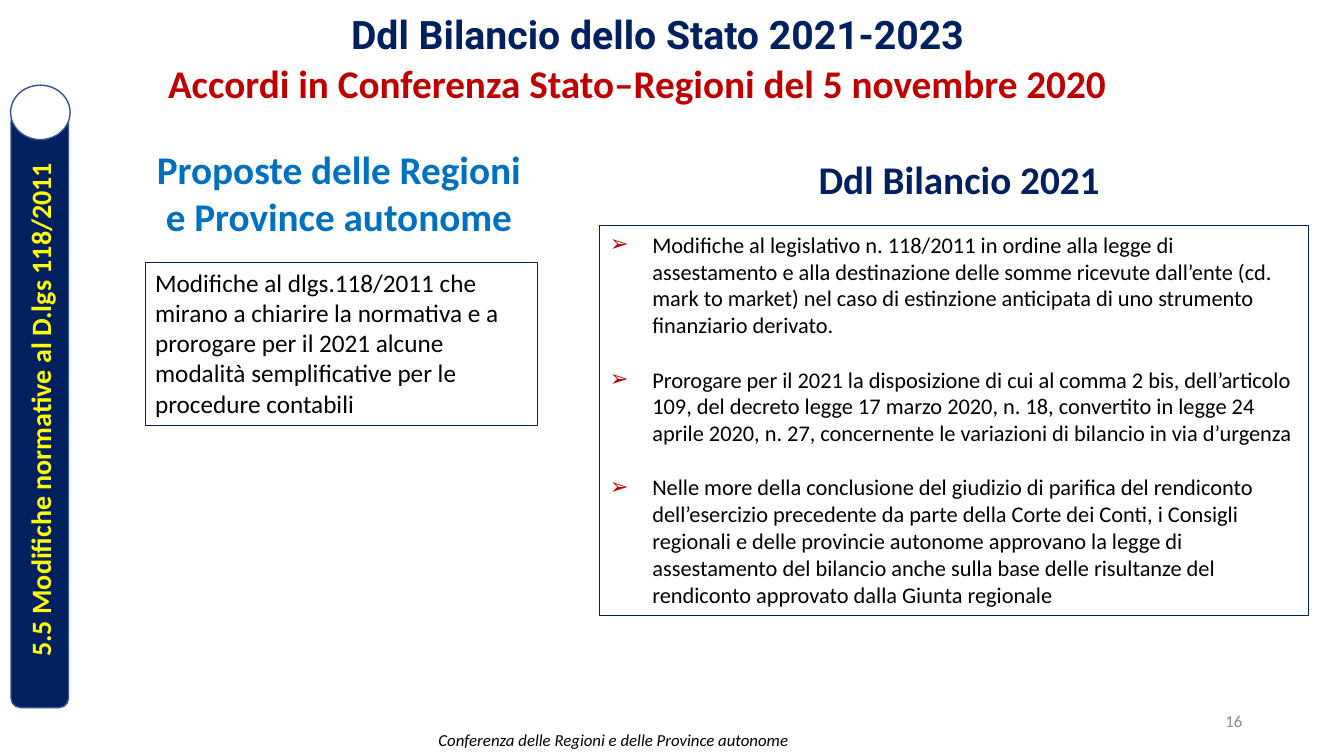
"""Build the slide on the 2021-2023 State budget bill and the Regions' proposals."""
from dataclasses import dataclass

from lxml.etree import SubElement
from pptx import Presentation
from pptx.dml.color import RGBColor
from pptx.enum.shapes import MSO_SHAPE
from pptx.enum.text import MSO_ANCHOR, MSO_AUTO_SIZE, PP_ALIGN
from pptx.oxml.ns import qn
from pptx.util import Inches, Pt


@dataclass(frozen=True)
class Theme:
    navy: str = "002060"
    red: str = "C00000"
    blue: str = "0070C0"
    yellow: str = "FFFF00"
    outline: str = "325491"
    white: str = "FFFFFF"
    black: str = "000000"
    grey: str = "8C8C8C"
    body_font: str = "Calibri"
    title_font: str = "Roboto"
    heading: int = 28
    label: int = 20
    summary: int = 18
    detail: int = 16
    small: int = 12


class BudgetSlide:
    def __init__(self, presentation, theme):
        self.theme = theme
        self.slide = presentation.slides.add_slide(presentation.slide_layouts[1])

    def place(self, shape, box):
        for name, value in zip(("left", "top", "width", "height"), box):
            setattr(shape, name, Inches(value))

    def fill_text(self, shape, lines, size, color, align=PP_ALIGN.LEFT,
                  anchor=MSO_ANCHOR.TOP, font=None, gap=0, bullet=None, **style):
        frame = shape.text_frame
        frame_format = {"word_wrap": True, "auto_size": MSO_AUTO_SIZE.NONE,
                        "vertical_anchor": anchor}
        for name, value in frame_format.items():
            setattr(frame, name, value)
        font_format = {"name": font or self.theme.body_font, "size": Pt(size),
                       "bold": False, "italic": False, **style}
        for index, line in enumerate(lines):
            paragraph = frame.add_paragraph() if index else frame.paragraphs[0]
            paragraph_format = {"alignment": align, "line_spacing": 1.0,
                                "space_before": Pt(gap if index else 0)}
            for name, value in paragraph_format.items():
                setattr(paragraph, name, value)
            if bullet:
                self.add_bullet(paragraph, bullet)
            run = paragraph.add_run()
            run.text = line
            for name, value in font_format.items():
                setattr(run.font, name, value)
            run.font.color.rgb = RGBColor.from_string(color)

    def add_bullet(self, paragraph, symbol):
        properties = paragraph._p.get_or_add_pPr()
        indent = Inches(0.42)
        properties.set("marL", str(indent))
        properties.set("indent", str(-indent))
        bullet_color = SubElement(properties, qn("a:buClr"))
        SubElement(bullet_color, qn("a:srgbClr"), val=self.theme.red)
        SubElement(properties, qn("a:buChar"), char=symbol)

    def outline(self, shape, color, width):
        shape.line.color.rgb = RGBColor.from_string(color)
        shape.line.width = Pt(width)

    def title(self, box, text, **style):
        heading = self.slide.shapes.title
        self.place(heading, box)
        self.fill_text(heading, [text], **style)

    def bullets(self, box, items, **style):
        body = self.slide.placeholders[1]
        self.place(body, box)
        self.outline(body, self.theme.navy, 0.75)
        self.fill_text(body, items, bullet="➢", **style)

    def text(self, box, lines, **style):
        label = self.slide.shapes.add_textbox(*map(Inches, box))
        self.fill_text(label, lines, **style)

    def shape(self, kind, box, fill=None, line=None, width=1, rotation=0,
              lines=(), **style):
        panel = self.slide.shapes.add_shape(kind, *map(Inches, box))
        panel.shadow.inherit = False
        panel.rotation = rotation
        if fill:
            panel.fill.solid()
            panel.fill.fore_color.rgb = RGBColor.from_string(fill)
        else:
            panel.fill.background()
        if line:
            self.outline(panel, line, width)
        else:
            panel.line.fill.background()
        if lines:
            self.fill_text(panel, lines, **style)


def main():
    theme = Theme()
    presentation = Presentation()
    presentation.slide_width = Inches(13.33)
    presentation.slide_height = Inches(7.5)
    budget = BudgetSlide(presentation, theme)
    centered = {"align": PP_ALIGN.CENTER}
    middle = {"anchor": MSO_ANCHOR.MIDDLE}
    heading = {"size": theme.heading, "bold": True}

    budget.shape(MSO_SHAPE.RECTANGLE, (3.48, 7.23, 5.21, 0.22), fill=theme.white,
                 lines=["Conferenza delle Regioni e delle Province autonome"],
                 size=theme.small, color=theme.black, italic=True,
                 **centered, **middle)
    budget.title((2.02, 0.05, 9, 0.52), "Ddl Bilancio dello Stato 2021-2023",
                 color=theme.navy, font=theme.title_font, **heading, **centered)
    budget.text((1.29, 0.54, 10.05, 0.57),
                ["Accordi in Conferenza Stato–Regioni del 5 novembre 2020"],
                color=theme.red, **heading, **centered)
    budget.shape(MSO_SHAPE.ROUNDED_RECTANGLE, (-2.56, 3.78, 5.91, 0.57),
                 fill=theme.navy, line=theme.outline, rotation=270,
                 lines=["5.5 Modifiche normative al D.lgs 118/2011"],
                 size=theme.label, color=theme.yellow, bold=True,
                 **centered, **middle)
    budget.shape(MSO_SHAPE.FLOWCHART_CONNECTOR, (0.13, 0.82, 0.54, 0.59),
                 fill=theme.white, line=theme.outline, rotation=270)

    budget.text((0.3, 1.39, 6.12, 1.04),
                ["Proposte delle Regioni", "e Province autonome"],
                color=theme.blue, **heading, **centered)
    budget.shape(MSO_SHAPE.RECTANGLE, (1.44, 2.6, 3.89, 1.62),
                 line=theme.navy, width=0.75,
                 lines=["Modifiche al dlgs.118/2011 che mirano a chiarire la "
                        "normativa e a prorogare per il 2021 alcune modalità "
                        "semplificative per le procedure contabili"],
                 size=theme.summary, color=theme.black)

    budget.text((8.02, 1.49, 4.15, 0.57), ["Ddl Bilancio 2021"],
                color=theme.navy, **heading)
    budget.bullets((5.95, 2.24, 7.03, 3.87), [
        "Modifiche al legislativo n. 118/2011 in ordine alla legge di "
        "assestamento e alla destinazione delle somme ricevute dall’ente (cd. "
        "mark to market) nel caso di estinzione anticipata di uno strumento "
        "finanziario derivato.",
        "Prorogare per il 2021 la disposizione di cui al comma 2 bis, "
        "dell’articolo 109, del decreto legge 17 marzo 2020, n. 18, convertito "
        "in legge 24 aprile 2020, n. 27, concernente le variazioni di bilancio "
        "in via d’urgenza",
        "Nelle more della conclusione del giudizio di parifica del rendiconto "
        "dell’esercizio precedente da parte della Corte dei Conti, i Consigli "
        "regionali e delle provincie autonome approvano la legge di "
        "assestamento del bilancio anche sulla base delle risultanze del "
        "rendiconto approvato dalla Giunta regionale",
    ], size=theme.detail, color=theme.black, gap=19.5)

    budget.text((9.42, 6.95, 3, 0.4), ["16"], size=theme.small,
                color=theme.grey, align=PP_ALIGN.RIGHT, **middle)
    presentation.save("out.pptx")


if __name__ == "__main__":
    main()
